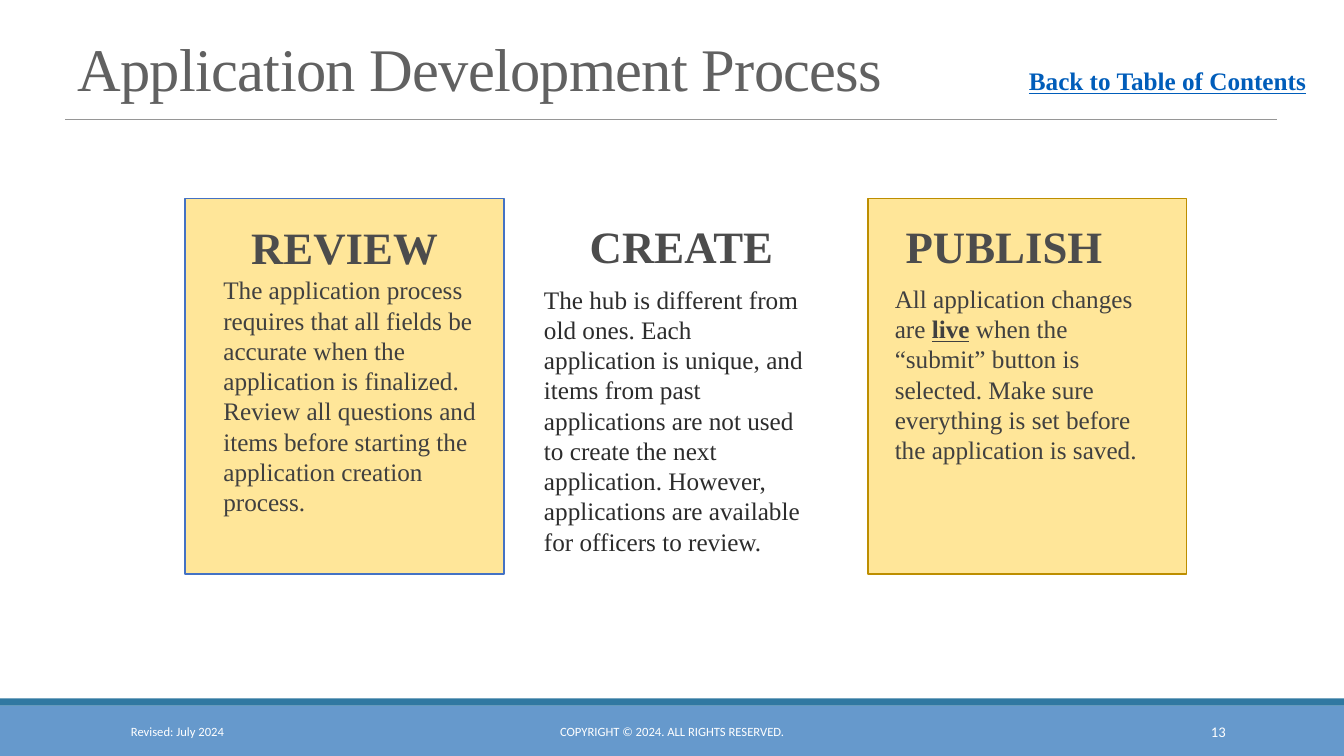
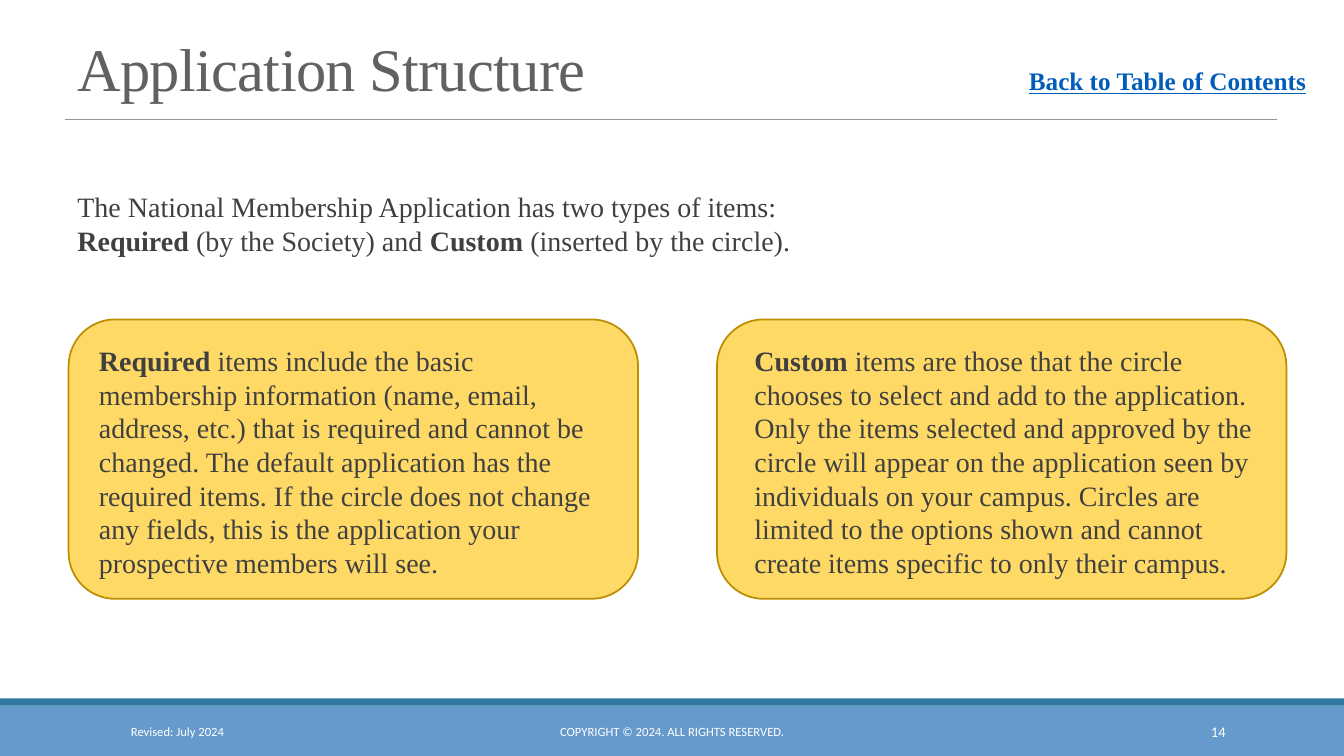
from pptx import Presentation
from pptx.dml.color import RGBColor
from pptx.enum.shapes import MSO_CONNECTOR, MSO_SHAPE
from pptx.enum.text import MSO_ANCHOR, MSO_AUTO_SIZE, PP_ALIGN
from pptx.oxml.ns import qn
from pptx.util import Cm, Pt
from lxml import etree

SLIDE_WIDTH, SLIDE_HEIGHT = 33.87, 19.05
SERIF, SANS = "Times New Roman", "Calibri"
WHITE = "FFFFFF"
TITLE_GREY = "616161"
HEADING_GREY = "4C4C4C"
BODY_GREY = "404040"
DARK_GREY = "2C2C2C"
RULE_GREY = "969696"
LINK_BLUE = "005DBA"
BAND_BLUE = "6699CC"
STRIPE_BLUE = "3078A1"
BORDER_BLUE = "4472C4"
BORDER_GOLD = "BD8E00"
PALE_YELLOW = "FFE699"
YELLOW = "FFD966"


def color(hex_string):
    return RGBColor.from_string(hex_string)


def write_runs(paragraph, runs, size, hex_string, font=SERIF):
    """Add (text, style) runs; style may hold b for bold and u for underline."""
    added = []
    for text, style in runs:
        run = paragraph.add_run()
        run.text = text
        run.font.name = font
        run.font.size = Pt(size)
        run.font.color.rgb = color(hex_string)
        run.font.bold = "b" in style
        run.font.underline = "u" in style
        added.append(run)
    return added


def write_paragraphs(frame, paragraphs, size, hex_string, font=SERIF, align=PP_ALIGN.LEFT):
    for index, runs in enumerate(paragraphs):
        paragraph = frame.add_paragraph() if index else frame.paragraphs[0]
        paragraph.alignment = align
        write_runs(paragraph, runs, size, hex_string, font)


def add_text(slide, box, paragraphs, size, hex_string, font=SERIF,
             align=PP_ALIGN.LEFT, anchor=MSO_ANCHOR.TOP):
    frame = slide.shapes.add_textbox(*map(Cm, box)).text_frame
    frame.word_wrap = True
    frame.vertical_anchor = anchor
    write_paragraphs(frame, paragraphs, size, hex_string, font, align)


def add_panel(slide, box, fill, border=None, kind=MSO_SHAPE.RECTANGLE):
    shape = slide.shapes.add_shape(kind, *map(Cm, box))
    shape.shadow.inherit = False
    shape.fill.solid()
    shape.fill.fore_color.rgb = color(fill)
    if border:
        shape.line.color.rgb = color(border)
        shape.line.width = Pt(1.25)
    else:
        shape.line.fill.background()
    return shape


def add_header(slide, title):
    rule = slide.shapes.add_connector(MSO_CONNECTOR.STRAIGHT, Cm(1.65), Cm(3), Cm(32.18), Cm(3))
    rule.line.color.rgb = color(RULE_GREY)
    rule.line.width = Pt(0.5)
    etree.SubElement(rule._element.spPr, qn("a:effectLst"))
    add_text(slide, (25.68, 1.52, 7.72, 1.02), [[("Back to Table of Contents", "bu")]],
             18, LINK_BLUE)

    placeholder = slide.shapes.title
    placeholder.left, placeholder.top = Cm(1.7), Cm(0.79)
    placeholder.width, placeholder.height = Cm(23.95), Cm(1.96)
    frame = placeholder.text_frame
    frame.word_wrap = True
    frame.auto_size = MSO_AUTO_SIZE.NONE
    frame.vertical_anchor = MSO_ANCHOR.BOTTOM
    paragraph = frame.paragraphs[0]
    paragraph.alignment = PP_ALIGN.LEFT
    paragraph.line_spacing = 0.85
    for run in write_runs(paragraph, [(title, "")], 43.2, TITLE_GREY):
        run._r.get_or_add_rPr().set("spc", "-50")


def add_footer(slide, number):
    add_panel(slide, (0, 17.78, SLIDE_WIDTH, 1.27), BAND_BLUE)
    add_panel(slide, (0, 17.6, SLIDE_WIDTH, 0.18), STRIPE_BLUE)
    for left, width, text, size, align in (
        (3.05, 6.86, "Revised: July 2024", 9, PP_ALIGN.LEFT),
        (10.24, 13.39, "COPYRIGHT © 2024. ALL RIGHTS RESERVED.", 9, PP_ALIGN.CENTER),
        (27.51, 3.63, str(number), 10.5, PP_ALIGN.RIGHT),
    ):
        add_text(slide, (left, 17.93, width, 1.02), [[(text, "")]], size, WHITE,
                 SANS, align, MSO_ANCHOR.MIDDLE)


def add_base_slide(presentation, title, number):
    slide = presentation.slides.add_slide(presentation.slide_layouts.get_by_name("Title Only"))
    add_header(slide, title)
    add_footer(slide, number)
    return slide


def add_step(slide, box, heading, heading_offset, body, body_box, text_color, border=None):
    """Place a heading and a body, both offset from the corner of the step's box."""
    left, top, width, height = box
    if border:
        add_panel(slide, box, PALE_YELLOW, border)
    heading_x, heading_y = heading_offset
    add_text(slide, (left + heading_x, top + heading_y, width, 1.63), [[(heading, "b")]],
             32, HEADING_GREY, align=PP_ALIGN.CENTER)
    body_x, body_y, body_width = body_box
    add_text(slide, (left + body_x, top + body_y, body_width, height - body_y - 1),
             body, 18, text_color)


def build_process_slide(presentation):
    slide = add_base_slide(presentation, "Application Development Process", 13)
    review = [[("The application process requires that all fields be accurate when the "
                "application is finalized. Review all questions and items before starting "
                "the application creation process.", "")]]
    create = [[("The hub is different from old ones. Each application is unique, and items from "
                "past applications are not used to create the next application. However, "
                "applications are available for officers to review.", "")]]
    publish = [
        [("All application changes are ", ""), ("live", "bu"),
         (" when the “submit” button is selected. Make sure", "")],
        [("everything is set before the application is saved.", "")],
    ]
    steps = (
        ("REVIEW", (0, 0.41), review, (0.71, 1.8, 7.49), BODY_GREY, BORDER_BLUE),
        ("CREATE", (-0.11, 0.38), create, (0.19, 2.03, 7.09), DARK_GREY, None),
        ("PUBLISH", (-0.58, 0.38), publish, (0.43, 2.01, 7.01), BODY_GREY, BORDER_GOLD),
    )
    for column, step in enumerate(steps):
        add_step(slide, (4.67 + column * 8.6, 5, 8.03, 9.47), *step)


def add_item_card(slide, box, runs, left_margin, right_margin):
    shape = add_panel(slide, box, YELLOW, BORDER_GOLD, MSO_SHAPE.ROUNDED_RECTANGLE)
    frame = shape.text_frame
    frame.word_wrap = True
    frame.vertical_anchor = MSO_ANCHOR.TOP
    frame.margin_left, frame.margin_right = Cm(left_margin), Cm(right_margin)
    frame.margin_top, frame.margin_bottom = Cm(0.27), Cm(0)
    write_paragraphs(frame, [runs], 20, BODY_GREY)


def build_structure_slide(presentation):
    slide = add_base_slide(presentation, "Application Structure", 14)
    add_text(slide, (1.7, 4.65, 30.53, 1.96), [
        [("The National Membership Application has two types of items:", "")],
        [("Required", "b"), (" (by the Society) and ", ""),
         ("Custom", "b"), (" (inserted by the circle).", "")],
    ], 20, BODY_GREY)
    required = [
        ("Required", "b"),
        (" items include the basic membership information (name, email, address, etc.) that is "
         "required and cannot be changed. The default application has the required items. If "
         "the circle does not change any fields, this is the application your prospective "
         "members will see.", ""),
    ]
    custom = [
        ("Custom", "b"),
        (" items are those that the circle chooses to select and add to the application. Only "
         "the items selected and approved by the circle will appear on the application seen by "
         "individuals on your campus. Circles are limited to the options shown and cannot "
         "create items specific to only their campus.", ""),
    ]
    cards = ((required, 0.42, 0.52), (custom, 0.6, 0.36))
    for column, card in enumerate(cards):
        add_item_card(slide, (1.73 + column * 16.34, 8.05, 14.35, 7.04), *card)


def main():
    presentation = Presentation()
    presentation.slide_width = Cm(SLIDE_WIDTH)
    presentation.slide_height = Cm(SLIDE_HEIGHT)
    build_process_slide(presentation)
    build_structure_slide(presentation)
    presentation.save("out.pptx")


if __name__ == "__main__":
    main()
